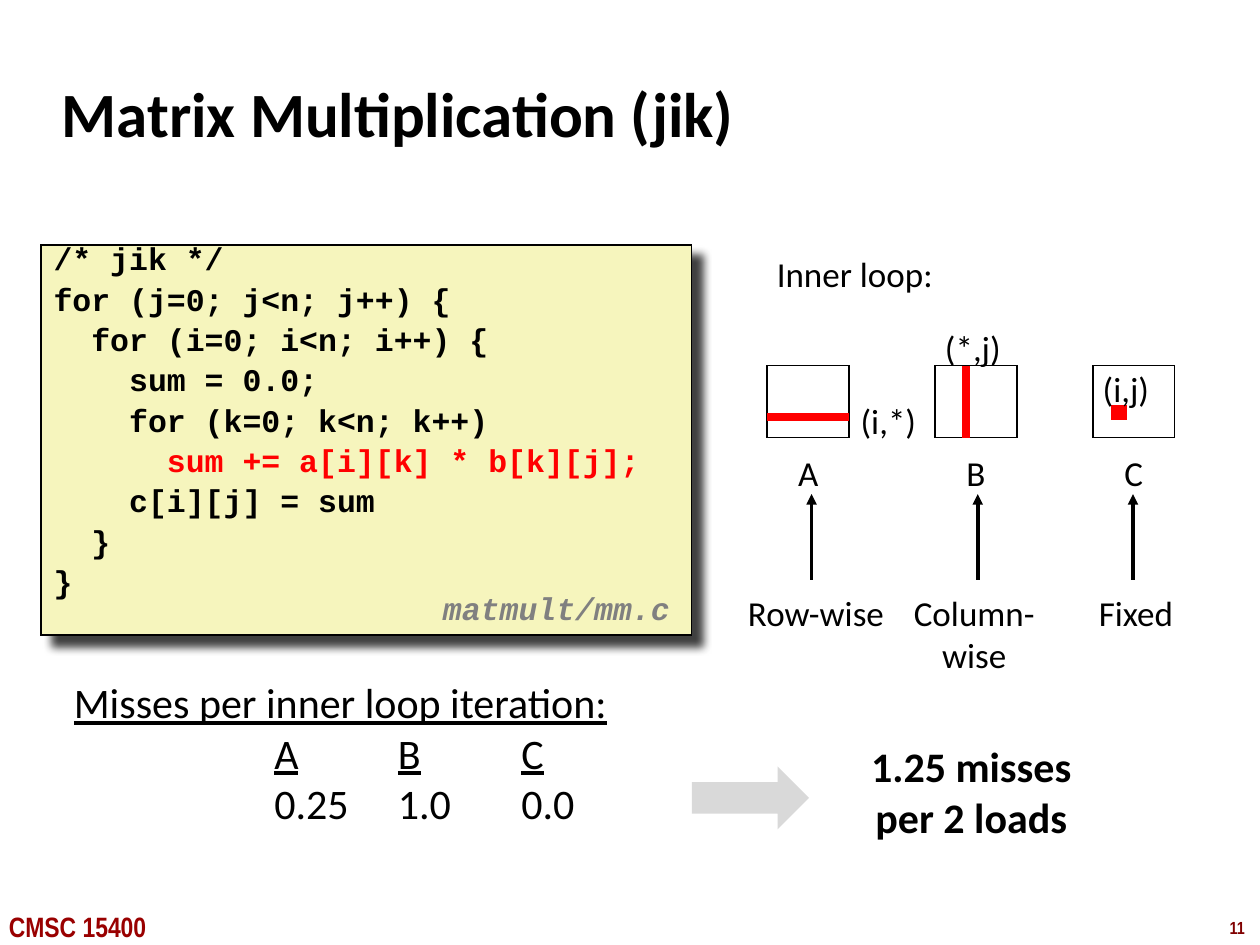
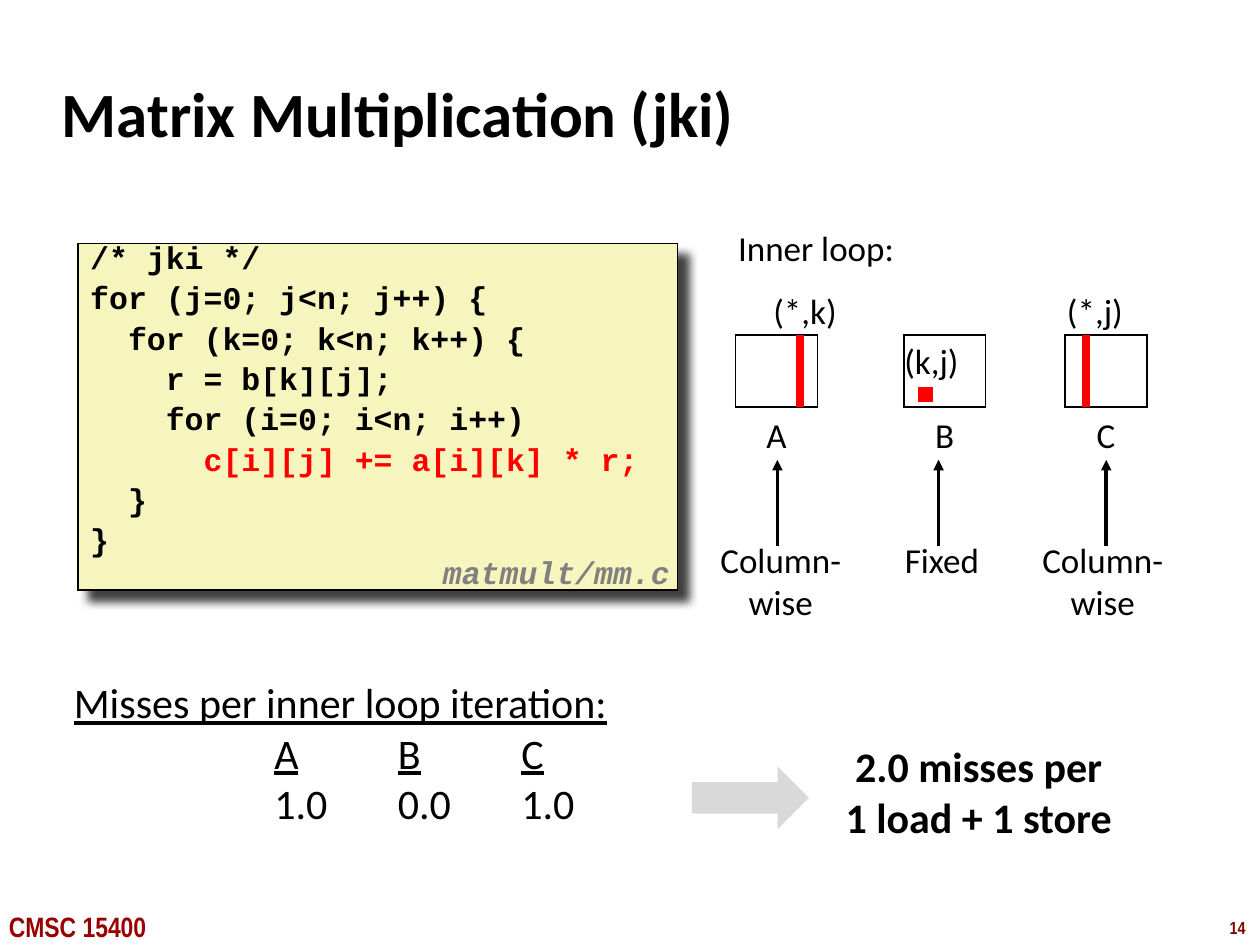
from dataclasses import dataclass

from lxml.etree import SubElement
from pptx import Presentation
from pptx.dml.color import RGBColor
from pptx.enum.shapes import MSO_CONNECTOR as CONN, MSO_SHAPE as SHAPE
from pptx.enum.text import MSO_ANCHOR as ANCHOR, PP_ALIGN as ALIGN
from pptx.oxml.ns import qn
from pptx.util import Cm, Pt

# Content; all lengths in cm
FOOTER = "CMSC 15400"
SOURCE = "matmult/mm.c"
MISSES = "Misses per inner loop iteration:"
NAMES = "ABC"

# Each matrix: left, mark kind, mark offset, index label and its place,
# arrow x, access label and its centre
SLIDES = [
    dict(
        number="11", title="Matrix Multiplication (jik)",
        code_box=(0.83, 4.94, 13.11, 7.87), source_top=11.82,
        code=["/* jik */",
              "for (j=0; j<n; j++) {",
              "  for (i=0; i<n; i++) {",
              "    sum = 0.0;",
              "    for (k=0; k<n; k++)",
              "      sum += a[i][k] * b[k][j];",
              "    c[i][j] = sum",
              "  }",
              "}"],
        hot=5, loop_at=(15.41, 4.96),
        matrix_top=7.37, name_top=8.98, arrow=(11.69, 9.96), access_top=11.79,
        matrices=[
            (15.47, "row", (0, 1.04), "(i,*)", (17.1, 7.92), 16.36, ["Row-wise"], 16.45),
            (18.85, "column", (0.62, 0), "(*,j)", (18.8, 6.45), 19.71, ["Column-", "wise"], 19.64),
            (22.03, "cell", (0.53, 0.94), "(i,j)", (21.98, 7.29), 22.84, ["Fixed"], 22.9),
        ],
        misses=["0.25", "1.0", "0.0"],
        result="1.25 misses per 2 loads", result_width=5.64,
    ),
    dict(
        number="14", title="Matrix Multiplication (jki)",
        code_box=(1.57, 4.91, 12.09, 6.98), source_top=11.08,
        code=["/* jki */",
              "for (j=0; j<n; j++) {",
              "  for (k=0; k<n; k++) {",
              "    r = b[k][j];",
              "    for (i=0; i<n; i++)",
              "      c[i][j] += a[i][k] * r;",
              "  }",
              "}"],
        hot=5, loop_at=(14.63, 4.45),
        matrix_top=6.76, name_top=8.22, arrow=(11.0, 9.27), access_top=10.74,
        matrices=[
            (14.83, "column", (1.3, 0), "(*,k)", (15.34, 5.72), 15.67, ["Column-", "wise"], 15.74),
            (18.22, "cell", (0.44, 1.19), "(k,j)", (17.98, 6.71), 18.92, ["Fixed"], 18.99),
            (21.47, "column", (0.43, 0), "(*,j)", (21.26, 5.72), 22.3, ["Column-", "wise"], 22.23),
        ],
        misses=["1.0", "0.0", "1.0"],
        result="2.0 misses per 1 load + 1 store", result_width=5.94,
    ),
]


@dataclass(frozen=True)
class Theme:
    black: str = "000000"
    white: str = "FFFFFF"
    red: str = "FF0000"
    gray: str = "808080"
    arrow: str = "D9D9D9"
    code_fill: str = "F6F5BD"
    footer: str = "990000"
    number: str = "800000"
    body: str = "Calibri"
    mono: str = "Courier New"
    narrow: str = "Arial Narrow"
    title_size: int = 36
    big: int = 24
    label: int = 20
    code: int = 18
    footer_size: int = 16
    number_size: int = 10
    mark: float = 4.5


T = Theme()
MATRIX_W, MATRIX_H = 1.65, 1.45
CELL = 0.15
LABEL_H = 1.09
INDEX_W = 1.9
TABS = [4.04 + 2.49 * i for i in range(3)]


def rgb(value):
    return RGBColor.from_string(value)


def write(tf, paras, font=T.body, size=T.label, color=T.black, bold=False,
          italic=False, align=ALIGN.LEFT, wrap=False, spacing=None, before=0):
    """Fill a frame; a paragraph is a string or a list of (text, overrides)."""
    tf.word_wrap = wrap
    for i, para in enumerate(paras):
        p = tf.paragraphs[0] if i == 0 else tf.add_paragraph()
        p.alignment = align
        if spacing:
            p.line_spacing = spacing
        if i and before:
            p.space_before = Pt(before)
        for words, extra in [(para, {})] if isinstance(para, str) else para:
            r = p.add_run()
            r.text = words
            f = r.font
            f.name, f.size, f.bold, f.italic = font, Pt(size), bold, italic
            f.underline = extra.get("underline", False)
            f.color.rgb = rgb(extra.get("color", color))
    return tf


def add_text(s, box, paras, **fmt):
    tf = s.shapes.add_textbox(*map(Cm, box)).text_frame
    return write(tf, paras, **fmt)


def add_box(s, kind, box, fill, line=None, width=1):
    sp = s.shapes.add_shape(kind, *map(Cm, box))
    sp.shadow.inherit = False
    sp.fill.solid()
    sp.fill.fore_color.rgb = rgb(fill)
    if line:
        sp.line.color.rgb = rgb(line)
        sp.line.width = Pt(width)
        # Square corners
        SubElement(sp.line._get_or_add_ln(), qn("a:miter"), lim="800000")
    else:
        sp.line.fill.background()
    return sp


def add_line(s, start, end, color, width, arrow=False):
    c = s.shapes.add_connector(CONN.STRAIGHT, *map(Cm, start + end))
    c.line.color.rgb = rgb(color)
    c.line.width = Pt(width)
    if arrow:
        SubElement(c.line._get_or_add_ln(), qn("a:tailEnd"), type="triangle")
    SubElement(c._element.spPr, qn("a:effectLst"))


def add_shadow(sp):
    effects = sp._element.spPr.find(qn("a:effectLst"))
    shadow = SubElement(effects, qn("a:outerShdw"), blurRad=str(Pt(5)),
                        dist=str(Pt(8.5)), dir="2700000", algn="tl", rotWithShape="0")
    color = SubElement(shadow, qn("a:srgbClr"), val=T.black)
    SubElement(color, qn("a:alpha"), val="75000")


def add_frame(s, d):
    """Title, footer and slide number."""
    title = s.shapes.title
    title.left, title.top, title.width, title.height = map(Cm, (0.99, 1.21, 21.08, 2.11))
    title.text_frame.vertical_anchor = ANCHOR.MIDDLE
    write(title.text_frame, [d["title"]], size=T.title_size, bold=True, wrap=True)
    tf = add_text(s, (0, 18.21, 3.5, 0.84), [FOOTER], font=T.narrow,
                  size=T.footer_size, color=T.footer, bold=True)
    tf.margin_left = Cm(0.18)
    add_text(s, (24.54, 18.36, 0.86, 0.69), [d["number"]], font=T.narrow,
             size=T.number_size, color=T.number, bold=True)


def add_code(s, d):
    sp = add_box(s, SHAPE.RECTANGLE, d["code_box"], T.code_fill, T.black)
    add_shadow(sp)
    lines = [[(line, {"color": T.red if i == d["hot"] else T.black})]
             for i, line in enumerate(d["code"])]
    sp.text_frame.vertical_anchor = ANCHOR.TOP
    write(sp.text_frame, lines, font=T.mono, size=T.code, bold=True,
          wrap=True, spacing=0.65, before=9)
    add_text(s, (8.68, d["source_top"], 5.28, 0.99), [SOURCE], font=T.mono,
             size=T.code, color=T.gray, bold=True, italic=True, spacing=0.94)


def add_matrices(s, d):
    add_text(s, (*d["loop_at"], 3.68, LABEL_H), ["Inner loop:"])
    y = d["matrix_top"]
    for name, matrix in zip(NAMES, d["matrices"]):
        x, kind, (dx, dy), index, index_at, arrow_x, access, access_x = matrix
        add_box(s, SHAPE.RECTANGLE, (x, y, MATRIX_W, MATRIX_H), T.white, T.black)
        add_text(s, (x + MATRIX_W / 2 - 0.46, d["name_top"], 0.92, LABEL_H),
                 [name], align=ALIGN.CENTER)
        # Part of the matrix that the inner loop touches
        if kind == "row":
            add_line(s, (x, y + dy), (x + MATRIX_W, y + dy), T.red, T.mark)
        elif kind == "column":
            add_line(s, (x + dx, y), (x + dx, y + MATRIX_H), T.red, T.mark)
        else:
            add_box(s, SHAPE.RECTANGLE,
                    (x + dx - CELL / 2, y + dy - CELL / 2, CELL, CELL),
                    T.red, T.red, T.mark)
        add_text(s, (*index_at, INDEX_W, LABEL_H), [index])
        # Access pattern
        bottom, top = d["arrow"]
        add_line(s, (arrow_x, bottom), (arrow_x, top), T.black, 2, arrow=True)
        add_text(s, (access_x - 1.65, d["access_top"], 3.3, LABEL_H * len(access)),
                 access, align=ALIGN.CENTER)


def add_misses(s, d):
    under = {"underline": True}
    header = [part for name in NAMES for part in (("\t", {}), (name, under))]
    values = "".join("\t" + v for v in d["misses"])
    tf = add_text(s, (1.24, 13.52, 15.2, 3.4), [[(MISSES, under)], header, values],
                  size=T.big, wrap=True)
    for p in tf.paragraphs[1:]:
        tabs = SubElement(p._p.get_or_add_pPr(), qn("a:tabLst"))
        for pos in TABS:
            SubElement(tabs, qn("a:tab"), pos=str(Cm(pos)), algn="l")
    add_box(s, SHAPE.RIGHT_ARROW, (13.95, 15.45, 2.36, 1.27), T.arrow)
    add_text(s, (16.76, 14.81, d["result_width"], 2.31), [d["result"]],
             size=T.big, bold=True, align=ALIGN.CENTER, wrap=True)


def main():
    prs = Presentation()
    prs.slide_width, prs.slide_height = Cm(25.4), Cm(19.05)
    for d in SLIDES:
        s = prs.slides.add_slide(prs.slide_layouts[5])
        for add_part in (add_frame, add_code, add_matrices, add_misses):
            add_part(s, d)
    prs.save("out.pptx")


if __name__ == "__main__":
    main()
